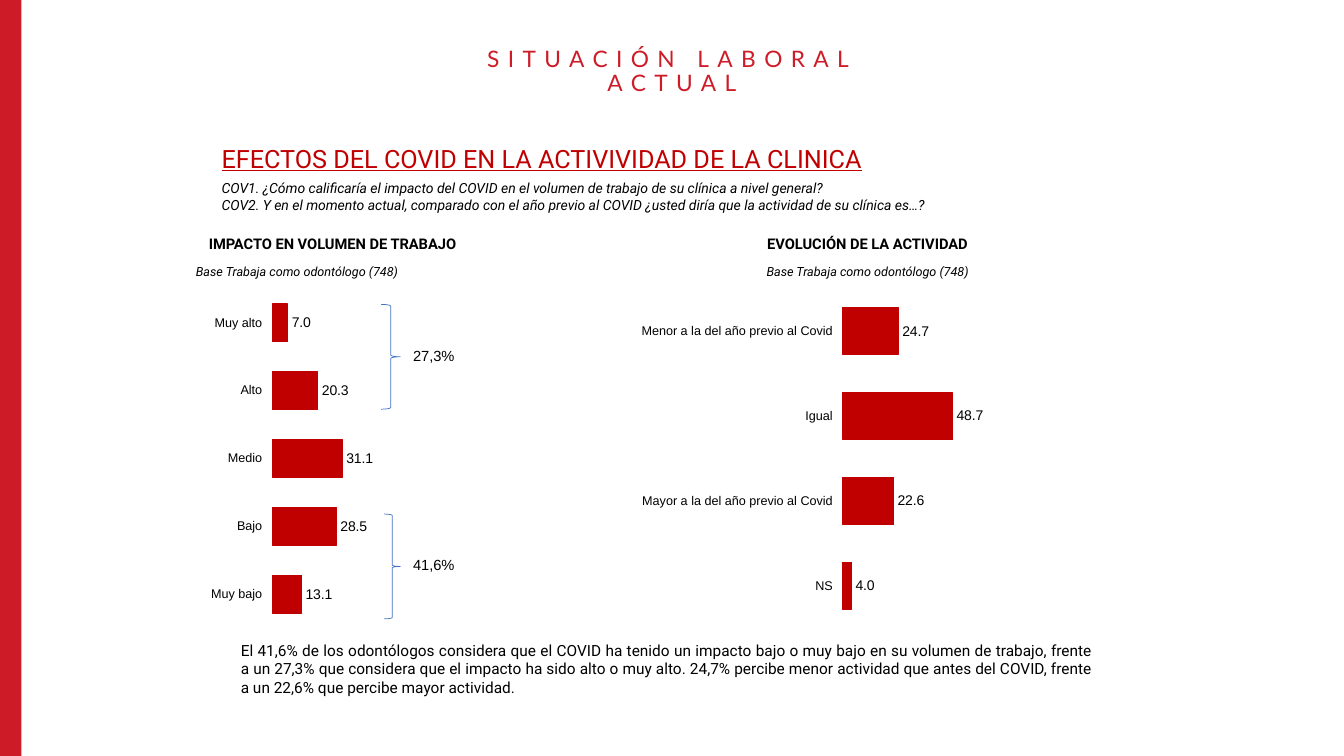
from lxml import etree
from pptx import Presentation
from pptx import util as u
from pptx.chart.data import CategoryChartData
from pptx.dml.color import RGBColor
from pptx.enum import chart as charts, shapes, text
from pptx.oxml.ns import qn

RED, DARK, BLACK, BLUE = "CD1C28", "C00000", "000000", "4472C4"
LEFT, MID, JUST = text.PP_ALIGN.LEFT, text.PP_ALIGN.CENTER, text.PP_ALIGN.JUSTIFY
BASE = "Base Trabaja como odontólogo (748)"


def color(code):
    return RGBColor.from_string(code)


class Page:
    """Builds one slide; boxes are (left, top, width, height) in percent of it."""

    def __init__(self, deck, font="Roboto"):
        self.deck, self.font = deck, font
        self.slide = deck.slides.add_slide(deck.slide_layouts[6])

    def place(self, box):
        sides = (self.deck.slide_width, self.deck.slide_height) * 2
        return [u.Emu(round(side * part / 100)) for side, part in zip(sides, box)]

    def shape(self, kind, box, fill=None, line=None):
        item = self.slide.shapes.add_shape(kind, *self.place(box))
        item.shadow.inherit = False
        if fill:
            item.fill.solid()
            item.fill.fore_color.rgb = color(fill)
        else:
            item.fill.background()
        if line:
            item.line.color.rgb = color(line)
            item.line.width = u.Pt(0.5)
        else:
            item.line.fill.background()

    def label(self, words, box, size, tint=BLACK, align=LEFT, font=None,
              bold=False, italic=False, under=False):
        frame = self.slide.shapes.add_textbox(*self.place(box)).text_frame
        frame.word_wrap = True
        frame.auto_size = text.MSO_AUTO_SIZE.SHAPE_TO_FIT_TEXT
        frame.text = words
        for para in frame.paragraphs:
            para.alignment = align
            for run in para.runs:
                face = run.font
                face.name, face.size = font or self.font, u.Pt(size)
                face.bold, face.italic, face.underline = bold, italic, under
                face.color.rgb = color(tint)
        return frame

    def title(self, words, box):
        frame = self.label(words, box, 16.2, RED, MID, "Lato")
        frame.auto_size = text.MSO_AUTO_SIZE.NONE
        frame.vertical_anchor = text.MSO_ANCHOR.MIDDLE
        para = frame.paragraphs[0]
        para.line_spacing = 0.9
        para.runs[0]._r.get_or_add_rPr().set("spc", "600")

    def bars(self, rows, box):
        data = CategoryChartData()
        data.categories = list(rows)
        data.add_series("Series 1", list(rows.values()))
        chart = self.slide.shapes.add_chart(
            charts.XL_CHART_TYPE.BAR_CLUSTERED, *self.place(box), data).chart
        chart.has_legend = chart.has_title = False
        chart.font.name, chart.font.size = "Arial", u.Pt(10.5)
        chart.font.color.rgb = color(BLACK)

        names, scale = chart.category_axis, chart.value_axis
        names.reverse_order = True
        names.format.line.fill.background()
        names.tick_labels.font.name = "Arial"
        names.tick_labels.font.size = u.Pt(9)
        scale.minimum_scale, scale.maximum_scale, scale.major_unit = 0, 110, 10
        scale.has_major_gridlines = scale.visible = False

        plot = chart.plots[0]
        plot.gap_width, plot.vary_by_categories = 80, False
        plot.has_data_labels = True
        labels = plot.data_labels
        labels.show_value = True
        labels.position = charts.XL_LABEL_POSITION.OUTSIDE_END
        labels.number_format, labels.number_format_is_linked = "#,##0.0", False
        labels.font.name, labels.font.size = "Arial", u.Pt(10)
        look = plot.series[0].format
        look.fill.solid()
        look.fill.fore_color.rgb = look.line.color.rgb = color(DARK)
        look.line.width = u.Pt(0.75)
        self.frame_plot(chart)

    def frame_plot(self, chart):
        """Fix the inner plot area so both charts share the same proportions."""
        area = chart._chartSpace.chart.plotArea
        for old in area.findall(qn("c:layout")):
            area.remove(old)
        layout = etree.Element(qn("c:layout"))
        area.insert(0, layout)
        manual = etree.SubElement(layout, qn("c:manualLayout"))
        rules = dict(layoutTarget="inner", xMode="edge", yMode="edge",
                     x="0.5", y="0.04", w="0.46", h="0.92")
        for tag, val in rules.items():
            etree.SubElement(manual, qn("c:" + tag)).set("val", val)


def main():
    deck = Presentation()
    deck.slide_width, deck.slide_height = u.Inches(13.33), u.Inches(7.5)
    page = Page(deck)
    page.shape(shapes.MSO_SHAPE.RECTANGLE, (0, 0, 1.6, 100), fill=RED)
    page.title("SITUACIÓN LABORAL ACTUAL", (34.13, 7.07, 31.73, 4.93))
    page.label("EFECTOS DEL COVID EN LA ACTIVIVIDAD DE LA CLINICA",
               (15.75, 18.27, 63.3, 5.33), 18, DARK, under=True)
    page.label("COV1. ¿Cómo calificaría el impacto del COVID en el volumen de "
               "trabajo de su clínica a nivel general?\n"
               "COV2. Y en el momento actual, comparado con el año previo al "
               "COVID ¿usted diría que la actividad de su clínica es…?",
               (15.75, 23.07, 69.6, 8.13), 10, italic=True)

    impact = {"Muy alto": 7, "Alto": 20.3, "Medio": 31.1, "Bajo": 28.5,
              "Muy bajo": 13.1}
    trend = {"Menor a la del año previo al Covid": 24.7, "Igual": 48.7,
             "Mayor a la del año previo al Covid": 22.6, "NS": 4}
    panels = [("IMPACTO EN VOLUMEN DE TRABAJO", 12.9, 23.7, 0.15, impact),
              ("EVOLUCIÓN DE LA ACTIVIDAD", 55.36, 18.38, 42.6, trend)]
    for head, left, wide, edge, rows in panels:
        page.label(head, (left, 30.4, wide, 3.73), 10.5, align=MID, bold=True)
        page.bars(rows, (edge, 36.27, 40.2, 48.8))
        page.label(BASE, (left, 34.27, 18.38, 3.33), 9, align=MID, italic=True)

    sums = [("27,3%", 28.36, 1.42, 40.27), ("41,6%", 28.58, 1.2, 68)]
    for total, left, wide, top in sums:
        page.shape(shapes.MSO_SHAPE.RIGHT_BRACE, (left, top, wide, 13.87), line=BLUE)
        page.label(total, (30, top + 4.93, 5.5, 3.73), 10.5, font="Arial")

    page.label("El 41,6% de los odontólogos considera que el COVID ha tenido un "
               "impacto bajo o muy bajo en su volumen de trabajo, frente a un "
               "27,3% que considera que el impacto ha sido alto o muy alto. "
               "24,7% percibe menor actividad que antes del COVID, frente a un "
               "22,6% que percibe mayor actividad.",
               (17.18, 84.13, 64.9, 8.8), 11, align=JUST)
    deck.save("out.pptx")


if __name__ == "__main__":
    main()
